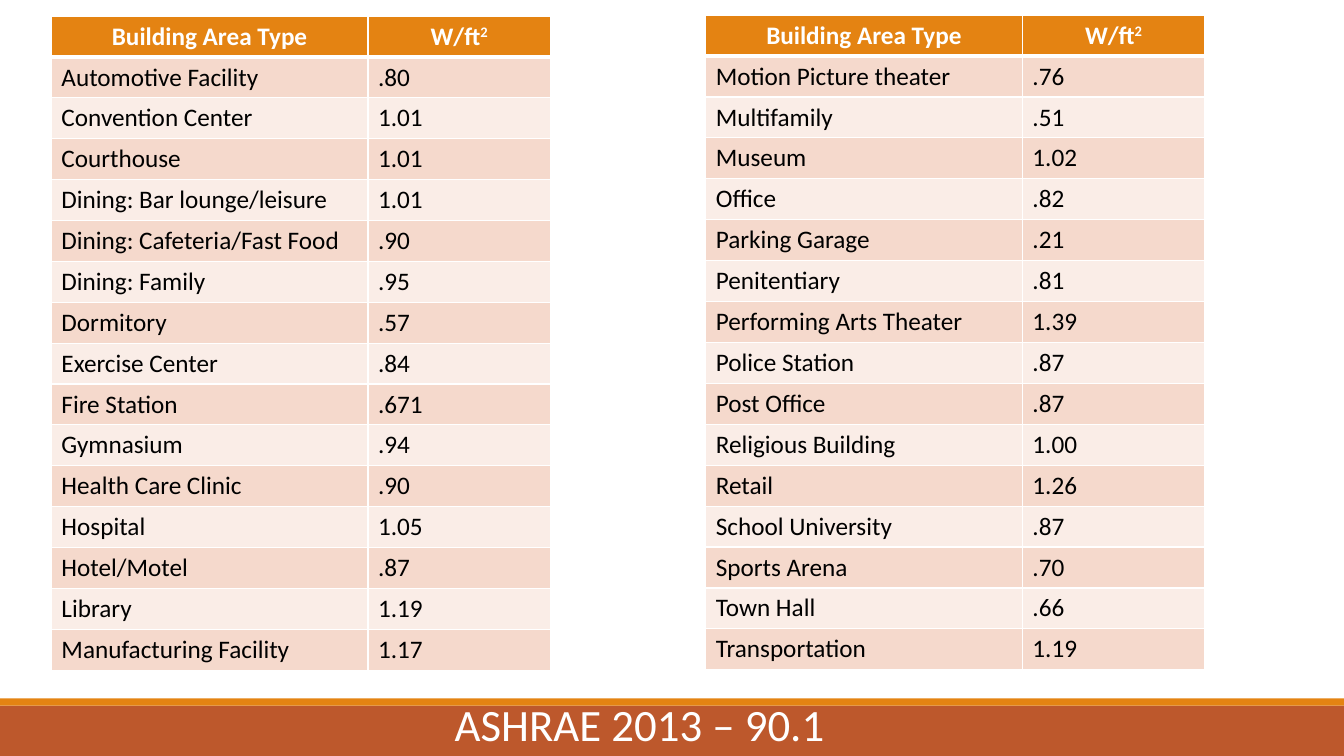
from lxml import etree
from pptx import Presentation
from pptx import util as u
from pptx.dml.color import RGBColor
from pptx.enum import shapes, text
from pptx.oxml import ns

DARK, AMBER, WHITE, BLACK = "BD582C", "E48312", "FFFFFF", "000000"
BANDS = ["FAEDE7", "F5D9CC"]
HEAD = ("Building Area Type", "W/ft")

LEFT = [
    ("Automotive Facility", ".80"),
    ("Convention Center", "1.01"),
    ("Courthouse", "1.01"),
    ("Dining: Bar lounge/leisure", "1.01"),
    ("Dining: Cafeteria/Fast Food", ".90"),
    ("Dining: Family", ".95"),
    ("Dormitory", ".57"),
    ("Exercise Center", ".84"),
    ("Fire Station", ".671"),
    ("Gymnasium", ".94"),
    ("Health Care Clinic", ".90"),
    ("Hospital", "1.05"),
    ("Hotel/Motel", ".87"),
    ("Library", "1.19"),
    ("Manufacturing Facility", "1.17"),
]
RIGHT = [
    ("Motion Picture theater", ".76"),
    ("Multifamily", ".51"),
    ("Museum", "1.02"),
    ("Office", ".82"),
    ("Parking Garage", ".21"),
    ("Penitentiary", ".81"),
    ("Performing Arts Theater", "1.39"),
    ("Police Station", ".87"),
    ("Post Office", ".87"),
    ("Religious Building", "1.00"),
    ("Retail", "1.26"),
    ("School University", ".87"),
    ("Sports Arena", ".70"),
    ("Town Hall", ".66"),
    ("Transportation", "1.19"),
]


def paint(fmt, color):
    """Give a fill or font a solid colour."""
    if hasattr(fmt, "solid"):
        fmt.solid()
        fmt.fore_color.rgb = RGBColor.from_string(color)
    else:
        fmt.color.rgb = RGBColor.from_string(color)


def write(para, words, size, color, bold=False):
    run = para.add_run()
    run.text = words
    style = {"name": "Calibri", "size": u.Pt(size), "bold": bold}
    for key, value in style.items():
        setattr(run.font, key, value)
    paint(run.font, color)
    return run


deck = Presentation()
deck.slide_width, deck.slide_height = u.Inches(13.33), u.Inches(7.5)
slide = deck.slides.add_slide(deck.slide_layouts[6])

# Footer bands
for top, height, color in [(7, 0.5, DARK), (6.93, 0.07, AMBER)]:
    band = slide.shapes.add_shape(
        shapes.MSO_SHAPE.RECTANGLE, 0, u.Inches(top), deck.slide_width, u.Inches(height))
    band.shadow.inherit = False
    paint(band.fill, color)
    band.line.fill.background()

# Power density tables
for left, top, height, data in [(0.51, 0.16, 6.49, LEFT), (7, 0.15, 6.5, RIGHT)]:
    rows = [HEAD] + data
    grid = slide.shapes.add_table(
        len(rows), 2, u.Inches(left), u.Inches(top), u.Inches(4.95), u.Inches(height)).table
    grid.horz_banding = False
    for col, width in zip(grid.columns, (3.14, 1.81)):
        col.width = u.Inches(width)
    for r, row in enumerate(rows):
        grid.rows[r].height = u.Inches(height / len(rows))
        for c, words in enumerate(row):
            cell = grid.cell(r, c)
            props = cell._tc.get_or_add_tcPr()
            for side in "LRTB":
                thick = (side == "B" and r == 0) or (side == "T" and r == 1)
                edge = etree.SubElement(
                    props, ns.qn("a:ln" + side), w=str(u.Pt(3 if thick else 1)))
                solid = etree.SubElement(edge, ns.qn("a:solidFill"))
                etree.SubElement(solid, ns.qn("a:srgbClr"), val=WHITE)
            paint(cell.fill, BANDS[r % 2] if r else AMBER)
            para = cell.text_frame.paragraphs[0]
            write(para, words, 18, BLACK if r else WHITE, r == 0)
            if r == 0:
                para.alignment = text.PP_ALIGN.CENTER
                if c == 1:
                    power = write(para, "2", 18, WHITE, True)
                    power.font._element.set("baseline", "30000")

# Title
box = slide.shapes.add_textbox(u.Inches(4.39), u.Inches(6.86), u.Inches(4.01), u.Inches(0.64))
frame = box.text_frame
frame.word_wrap = False
frame.auto_size = text.MSO_AUTO_SIZE.SHAPE_TO_FIT_TEXT
title = frame.paragraphs[0]
title.alignment = text.PP_ALIGN.CENTER
write(title, "ASHRAE 2013 – 90.1 ", 32, WHITE)

deck.save("out.pptx")
